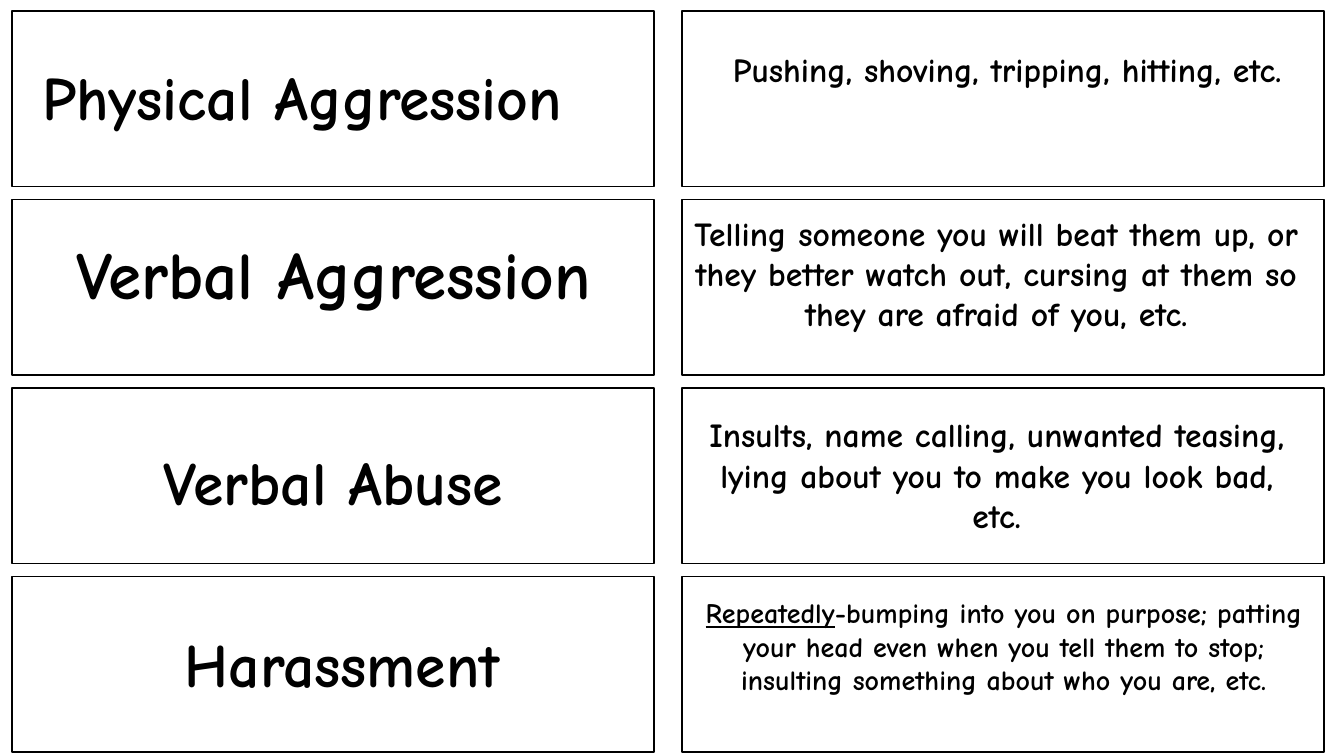
from pptx import Presentation
from pptx.dml.color import RGBColor
from pptx.enum.shapes import MSO_SHAPE
from pptx.enum.text import MSO_AUTO_SIZE, PP_ALIGN
from pptx.util import Cm, Pt

BLACK = RGBColor(0x00, 0x00, 0x00)
WHITE = RGBColor(0xFF, 0xFF, 0xFF)

CARD_W, CARD_H = 16.18, 4.42
LEFT, TOP = 0.3, 0.28
COL_STEP, ROW_STEP = 16.89, 4.75

# left, top, width, height, size, runs as (text, underlined)
TERMS = [
    (0.81, 1.35, 15.54, 2.13, 44, [("Physical Aggression", False)]),
    (0.64, 5.72, 15.54, 2.31, 48, [("Verbal Aggression", False)]),
    (0.64, 11.05, 15.54, 2.13, 44, [("Verbal Abuse", False)]),
    (0.86, 15.65, 15.54, 2.13, 44, [("Harassment", False)]),
]
EXAMPLES = [
    (17.6, 1.12, 15.57, 2.31, 24,
     [("Pushing, shoving, tripping, hitting, etc.", False)]),
    (17.04, 5.23, 16.13, 4.37, 24,
     [("Telling someone you will beat them up, or they better watch out, "
       "cursing at them so they are afraid of you, etc.", False)]),
    (17.35, 10.31, 15.54, 3.33, 24,
     [("Insults, name calling, unwanted teasing, lying about you to make "
       "you look bad, etc.", False)]),
    (17.53, 14.88, 15.54, 3.68, 20,
     [("Repeatedly", True),
      ("-bumping into you on purpose; patting your head even when you tell "
       "them to stop; insulting something about who you are, etc.", False)]),
]


class CardSlide:
    font = {"name": "Comic Neue", "bold": True}

    def __init__(self, slide):
        self.s = slide

    def card(self, col, row):
        sp = self.s.shapes.add_shape(
            MSO_SHAPE.RECTANGLE,
            Cm(LEFT + col * COL_STEP), Cm(TOP + row * ROW_STEP),
            Cm(CARD_W), Cm(CARD_H))
        sp.shadow.inherit = False
        sp.fill.solid()
        sp.fill.fore_color.rgb = WHITE
        sp.line.color.rgb = BLACK
        sp.line.width = Pt(1)

    def text(self, left, top, width, height, size, runs, align=PP_ALIGN.CENTER):
        sp = self.s.shapes.add_textbox(Cm(left), Cm(top), Cm(width), Cm(height))
        tf = sp.text_frame
        tf.word_wrap = True
        tf.auto_size = MSO_AUTO_SIZE.SHAPE_TO_FIT_TEXT
        p = tf.paragraphs[0]
        p.alignment = align
        for text, underlined in runs:
            r = p.add_run()
            r.text = text
            style = {**self.font, "size": Pt(size), "underline": underlined}
            for name, value in style.items():
                setattr(r.font, name, value)
            r.font.color.rgb = BLACK


def main():
    prs = Presentation()
    prs.slide_width, prs.slide_height = Cm(33.87), Cm(19.05)
    cards = CardSlide(prs.slides.add_slide(prs.slide_layouts[6]))
    for col in range(2):
        for row in range(4):
            cards.card(col, row)
    cards.text(*TERMS[0], align=PP_ALIGN.LEFT)
    for box in TERMS[1:] + EXAMPLES:
        cards.text(*box)
    prs.save("out.pptx")


if __name__ == "__main__":
    main()
